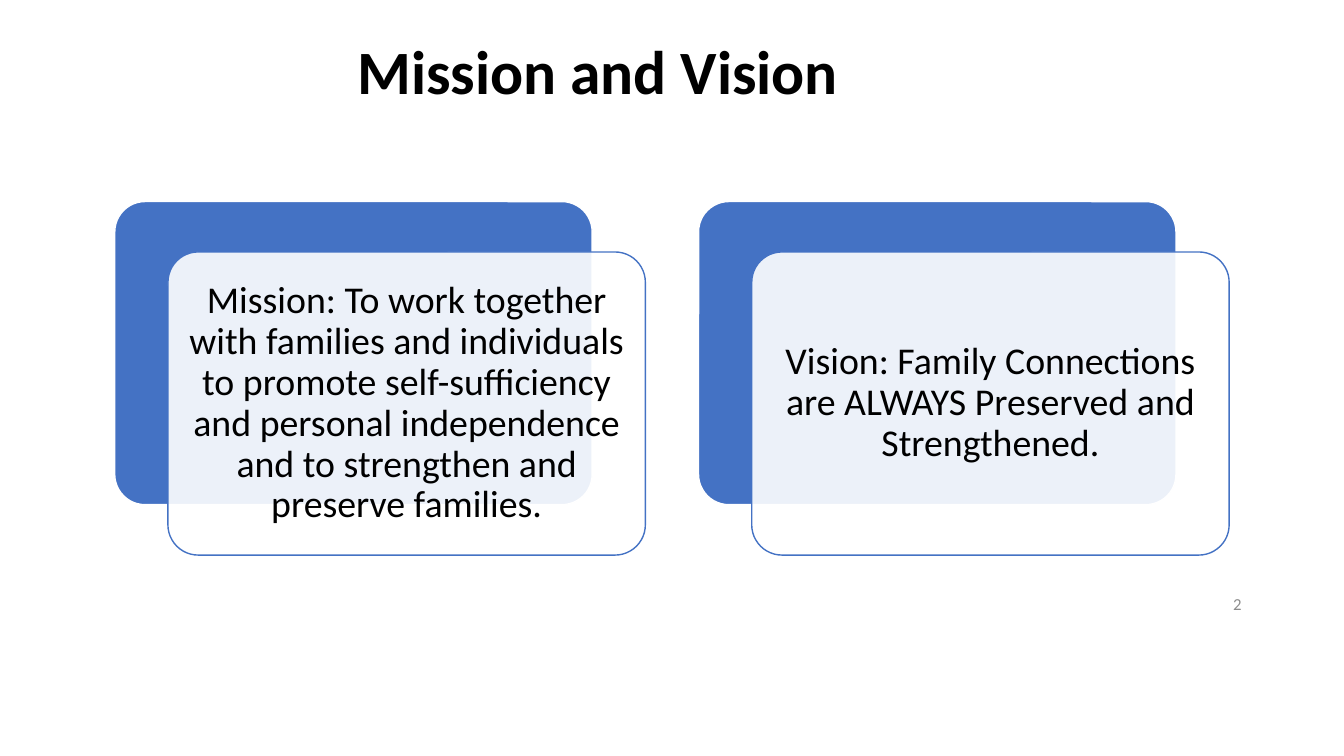
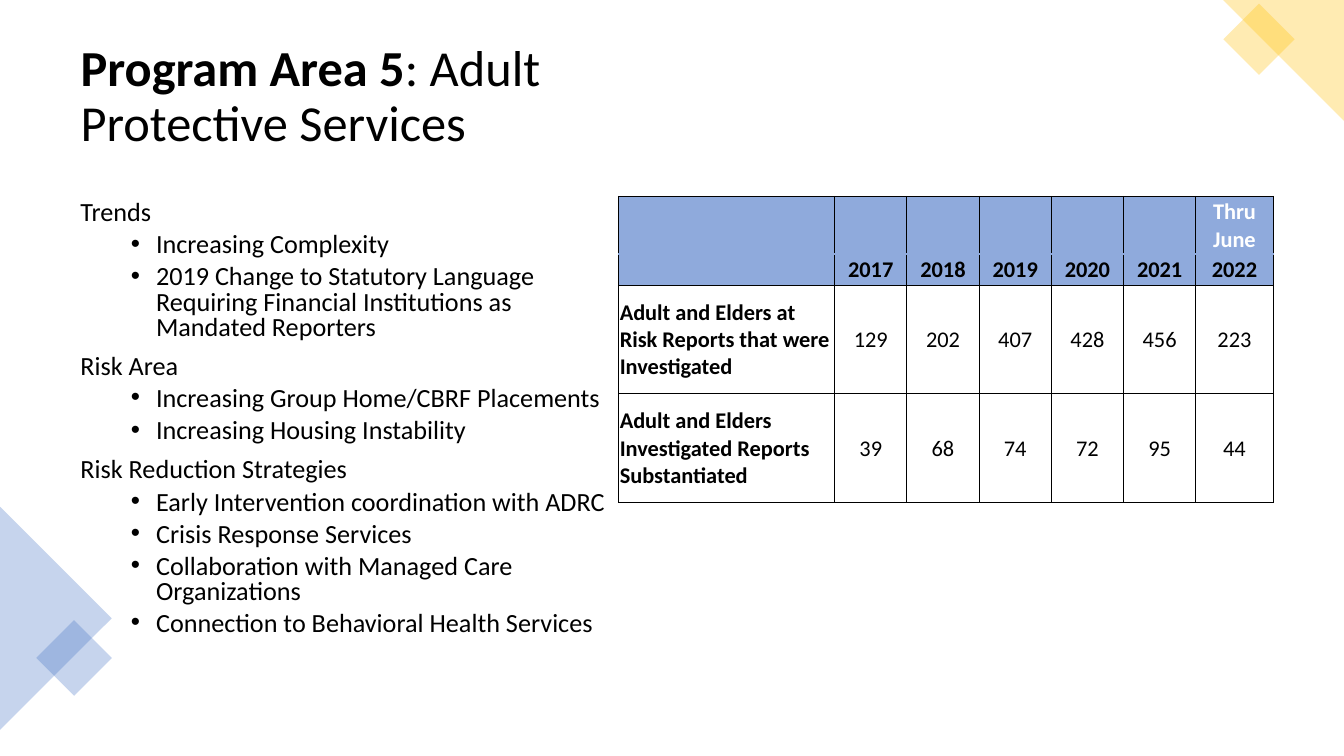
"""Build the mission slide and the adult protective services slide."""
from dataclasses import dataclass
from typing import Optional

from lxml import etree
from pptx import Presentation
from pptx import util as u
from pptx.dml import color
from pptx.enum import shapes, text
from pptx.oxml import ns

FONT = "Calibri"
BLACK, WHITE, GRAY = "000000", "FFFFFF", "8C8C8C"
BLUE, LIGHT_BLUE, GOLD = "4472C4", "8FAADC", "FFC000"
CENTER, LEFT, RIGHT = text.PP_ALIGN.CENTER, text.PP_ALIGN.LEFT, text.PP_ALIGN.RIGHT
MIDDLE = text.MSO_ANCHOR.MIDDLE
ROUNDED = shapes.MSO_SHAPE.ROUNDED_RECTANGLE
TRIANGLE = shapes.MSO_SHAPE.ISOSCELES_TRIANGLE
RECTANGLE = shapes.MSO_SHAPE.RECTANGLE


@dataclass(frozen=True)
class Box:
    """A frame in points."""

    left: float
    top: float
    width: float
    height: float

    def lengths(self) -> tuple:
        """Return the four lengths for python-pptx."""
        return tuple(u.Pt(v) for v in (self.left, self.top, self.width, self.height))


@dataclass(frozen=True)
class Panel:
    """A preset shape with its look."""

    kind: int
    box: Box
    fill: str
    opacity: int = 100
    line: Optional[str] = None
    rotation: float = 0
    adjustment: Optional[float] = None


@dataclass(frozen=True)
class Topic:
    """A heading with its bullet points."""

    heading: str
    points: tuple


CARDS = (
    "Mission: To work together with families and individuals to promote "
    "self-sufficiency and personal independence and to strengthen and preserve families.",
    "Vision: Family Connections are ALWAYS Preserved and Strengthened.",
)
CARD_LEFT, CARD_TOP, CARD_STEP = 82, 144, 417
CARD_WIDTH, CARD_HEIGHT = 341, 216.5
OVERLAY_RIGHT, OVERLAY_DOWN = 38, 36

TOPICS = (
    Topic("Trends", (
        "Increasing Complexity",
        "2019 Change to Statutory Language Requiring Financial Institutions "
        "as Mandated Reporters",
    )),
    Topic("Risk Area", (
        "Increasing Group Home/CBRF Placements",
        "Increasing Housing Instability",
    )),
    Topic("Risk Reduction Strategies", (
        "Early Intervention coordination with ADRC",
        "Crisis Response Services",
        "Collaboration with Managed Care Organizations",
        "Connection to Behavioral Health Services",
    )),
)
CORNERS = (
    Panel(TRIANGLE, Box(-39.7, 401.8, 159.3, 79.7), BLUE, 30, rotation=90),
    Panel(RECTANGLE, Box(33.8, 450.9, 38.2, 38.2), BLUE, 30, rotation=45),
    Panel(TRIANGLE, Box(873.6, 0, 86.4, 86.4), GOLD, 30, rotation=270, adjustment=1),
    Panel(RECTANGLE, Box(881.3, 10.1, 36, 36), GOLD, 30, rotation=45),
)
REPORTS = (
    ("", "", "", "", "", "", "Thru June"),
    ("", "2017", "2018", "2019", "2020", "2021", "2022"),
    ("Adult and Elders at Risk Reports that were Investigated",
     "129", "202", "407", "428", "456", "223"),
    ("Adult and Elders Investigated Reports Substantiated",
     "39", "68", "74", "72", "95", "44"),
)
COLUMN_WIDTHS = (154.2, *(51.6,) * 5, 55.3)
ROW_HEIGHTS = (41, 22.3, 77.6, 77.6)
HEADER_ROWS = 2


def rgb(value: str) -> color.RGBColor:
    """Turn a hex string into a colour."""
    return color.RGBColor.from_string(value)


def style(paragraph, size: float, align=LEFT, spacing: float = 0.9,
          bold: Optional[bool] = None, ink: str = BLACK) -> None:
    """Set alignment, spacing and font of a paragraph."""
    paragraph.alignment = align
    paragraph.line_spacing = spacing
    font = paragraph.font
    font.name, font.size, font.bold = FONT, u.Pt(size), bold
    font.color.rgb = rgb(ink)


def add_panel(slide, panel: Panel):
    """Draw a preset shape."""
    shape = slide.shapes.add_shape(panel.kind, *panel.box.lengths())
    shape.shadow.inherit = False
    shape.rotation = panel.rotation
    if panel.adjustment is not None:
        shape.adjustments[0] = panel.adjustment
    shape.fill.solid()
    shape.fill.fore_color.rgb = rgb(panel.fill)
    if panel.opacity < 100:
        tint = shape.element.spPr.find(ns.qn("a:solidFill"))[0]
        etree.SubElement(tint, ns.qn("a:alpha"), val=str(panel.opacity * 1000))
    if panel.line:
        shape.line.color.rgb = rgb(panel.line)
        shape.line.width = u.Pt(1)
    else:
        shape.line.fill.background()
    return shape


def add_text_frame(slide, box: Box):
    """Add a wrapping text box and return its frame."""
    frame = slide.shapes.add_textbox(*box.lengths()).text_frame
    frame.word_wrap = True
    return frame


def add_titled_slide(presentation, box: Box, size: float, align, bold_part: str,
                     plain_part: str = ""):
    """Add a title-only slide with its title placed and formatted."""
    slide = presentation.slides.add_slide(presentation.slide_layouts[5])
    title = slide.shapes.title
    title.left, title.top, title.width, title.height = box.lengths()
    frame = title.text_frame
    frame.auto_size = text.MSO_AUTO_SIZE.NONE
    frame.vertical_anchor = MIDDLE
    paragraph = frame.paragraphs[0]
    style(paragraph, size, align)
    for words, bold in ((bold_part, True), (plain_part, False)):
        if words:
            run = paragraph.add_run()
            run.text, run.font.bold = words, bold
    return slide


def add_card(slide, index: int, words: str) -> None:
    """Draw a blue card with its text overlay."""
    left = CARD_LEFT + index * CARD_STEP
    back = Box(left, CARD_TOP, CARD_WIDTH, CARD_HEIGHT)
    front = Box(left + OVERLAY_RIGHT, CARD_TOP + OVERLAY_DOWN, CARD_WIDTH, CARD_HEIGHT)
    add_panel(slide, Panel(ROUNDED, back, BLUE, line=WHITE, adjustment=0.1))
    overlay = add_panel(slide, Panel(ROUNDED, front, WHITE, 90, BLUE, adjustment=0.1))
    frame = overlay.text_frame
    frame.word_wrap = True
    frame.vertical_anchor = MIDDLE
    frame.margin_left = frame.margin_right = u.Pt(7.5)
    frame.text = words
    style(frame.paragraphs[0], 27, CENTER)


def add_bullet(paragraph) -> None:
    """Give a paragraph a hanging bullet."""
    paragraph.level = 1
    properties = paragraph._p.get_or_add_pPr()
    properties.set("marL", str(u.Pt(54)))
    properties.set("indent", str(u.Pt(-18)))
    etree.SubElement(properties, ns.qn("a:buFont"), typeface="Arial")
    etree.SubElement(properties, ns.qn("a:buChar"), char="•")


def add_topics(slide, box: Box) -> None:
    """Write the headings and their bullet points."""
    frame = add_text_frame(slide, box)
    lines = [(words, words != topic.heading)
             for topic in TOPICS for words in (topic.heading, *topic.points)]
    for index, (words, bulleted) in enumerate(lines):
        paragraph = frame.add_paragraph() if index else frame.paragraphs[0]
        paragraph.text = words
        if bulleted:
            add_bullet(paragraph)
        paragraph.space_before = u.Pt(5 if bulleted else 10)
        style(paragraph, 18.7, spacing=0.8)


def set_borders(cell, top: str, bottom: str) -> None:
    """Draw one-point borders around a cell."""
    properties = cell._tc.get_or_add_tcPr()
    sides = (("L", BLACK), ("R", BLACK), ("T", top), ("B", bottom))
    for index, (side, ink) in enumerate(sides):
        line = etree.Element(ns.qn(f"a:ln{side}"), w=str(u.Pt(1)))
        fill = etree.SubElement(line, ns.qn("a:solidFill"))
        etree.SubElement(fill, ns.qn("a:srgbClr"), val=ink)
        properties.insert(index, line)


def fill_cell(cell, row: int, column: int, words: str) -> None:
    """Write and format one table cell."""
    header = row < HEADER_ROWS
    cell.text = words
    cell.vertical_anchor = MIDDLE
    cell.margin_left = cell.margin_right = cell.margin_top = u.Pt(0.7)
    cell.margin_bottom = u.Pt(0)
    style(cell.text_frame.paragraphs[0], 16, CENTER if header or column else LEFT,
          1.0, header or column == 0, WHITE if row == 0 else BLACK)
    if header:
        cell.fill.solid()
        cell.fill.fore_color.rgb = rgb(LIGHT_BLUE)
    else:
        cell.fill.background()
    set_borders(cell, LIGHT_BLUE if row == 1 else BLACK, LIGHT_BLUE if row == 0 else BLACK)


def add_reports(slide, left: float, top: float) -> None:
    """Add the table of yearly reports."""
    box = Box(left, top, sum(COLUMN_WIDTHS), sum(ROW_HEIGHTS))
    table = slide.shapes.add_table(len(REPORTS), len(COLUMN_WIDTHS), *box.lengths()).table
    table.first_row = table.horz_banding = False
    for column, width in zip(table.columns, COLUMN_WIDTHS):
        column.width = u.Pt(width)
    for row, height in zip(table.rows, ROW_HEIGHTS):
        row.height = u.Pt(height)
    for row, values in enumerate(REPORTS):
        for column, words in enumerate(values):
            fill_cell(table.cell(row, column), row, column, words)


def build_mission(presentation) -> None:
    """Build the mission and vision slide."""
    slide = add_titled_slide(presentation, Box(26.6, 15.1, 801.4, 75.6), 44, CENTER,
                             "Mission and Vision")
    for index, words in enumerate(CARDS):
        add_card(slide, index, words)
    frame = add_text_frame(slide, Box(678, 417, 216, 28.8))
    frame.vertical_anchor = MIDDLE
    frame.text = "2"
    style(frame.paragraphs[0], 12, RIGHT, 1.0, ink=GRAY)


def build_program_area(presentation) -> None:
    """Build the adult protective services slide."""
    slide = add_titled_slide(presentation, Box(50.4, 25.2, 391.7, 89.3), 36, LEFT,
                             "Program Area 5", ": Adult Protective Services")
    add_topics(slide, Box(50.4, 140.4, 391.7, 346.3))
    for panel in CORNERS:
        add_panel(slide, panel)
    add_reports(slide, 442, 140.4)


def main() -> None:
    """Build and save the presentation."""
    presentation = Presentation()
    presentation.slide_width, presentation.slide_height = u.Pt(960), u.Pt(540)
    build_mission(presentation)
    build_program_area(presentation)
    presentation.save("out.pptx")


if __name__ == "__main__":
    main()
